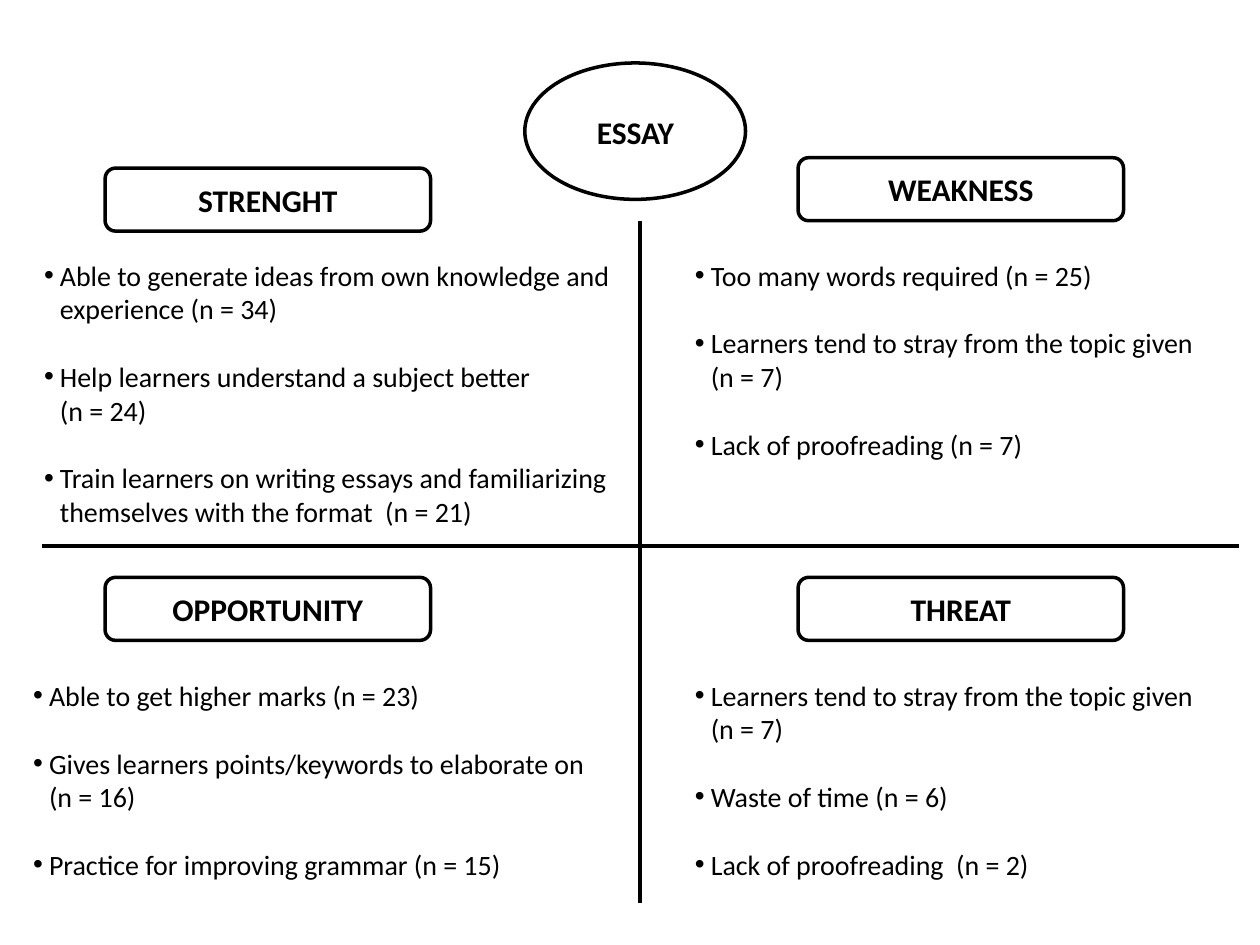
import pptx
import pptx.dml.color
import pptx.enum.shapes
import pptx.enum.text
import pptx.util
from lxml import etree

Cm, Pt = pptx.util.Cm, pptx.util.Pt
SHAPE = pptx.enum.shapes.MSO_SHAPE
ALIGN = pptx.enum.text.PP_ALIGN
ANCHOR = pptx.enum.text.MSO_ANCHOR

COLORS = {"ink": "000000", "paper": "FFFFFF"}
FONT = "Calibri"
TOPIC = "ESSAY"

# Positions in cm; \v breaks a line inside a point.
QUADRANTS = [
    {"heading": "STRENGHT", "heading_at": (2.12, 3.39), "list_at": (0.64, 5.08, 12.06, 6),
     "points": ["Able to generate ideas from own knowledge and experience (n = 34)",
                "Help learners understand a subject better\v(n = 24)",
                "Train learners on writing essays and familiarizing themselves "
                "with the format  (n = 21)"]},
    {"heading": "OPPORTUNITY", "heading_at": (2.12, 11.64), "list_at": (0.42, 13.55, 12.7, 5.5),
     "points": ["Able to get higher marks (n = 23)",
                "Gives learners points/keywords to elaborate on\v(n = 16)",
                "Practice for improving grammar (n = 15)"]},
    {"heading": "THREAT", "heading_at": (16.09, 11.64), "list_at": (13.76, 13.55, 11.01, 4.23),
     "points": ["Learners tend to stray from the topic given (n = 7)",
                "Waste of time (n = 6)",
                "Lack of proofreading  (n = 2)"]},
    {"heading": "WEAKNESS", "heading_at": (16.09, 3.18), "list_at": (13.76, 5.08, 11.64, 4.45),
     "points": ["Too many words required (n = 25)",
                "Learners tend to stray from the topic given\v(n = 7)",
                "Lack of proofreading (n = 7)"]},
]
HEADING_SIZE = (6.56, 1.27)
CENTER = (12.91, 11.01)
AXIS_ENDS = [((CENTER[0], 4.45), (CENTER[0], 18.2)),
             ((24.98, CENTER[1]), CENTER),
             (CENTER, (0.85, CENTER[1]))]


def color(name):
    return pptx.dml.color.RGBColor.from_string(COLORS[name])


def lengths(values):
    return [Cm(value) for value in values]


def format_runs(paragraph, size, bold=False):
    for run in paragraph.runs:
        run.font.name, run.font.size, run.font.bold = FONT, Pt(size), bold
        run.font.color.rgb = color("ink")


def add_outlined(shapes, preset, box):
    shape = shapes.add_shape(preset, *lengths(box))
    shape.shadow.inherit = False
    shape.fill.background()
    shape.line.color.rgb = color("ink")
    shape.line.width = Pt(2)
    return shape


def set_title(shape, text):
    frame = shape.text_frame
    frame.word_wrap = True
    frame.vertical_anchor = ANCHOR.MIDDLE
    frame.text = text
    frame.paragraphs[0].alignment = ALIGN.CENTER
    format_runs(frame.paragraphs[0], 18, bold=True)


def add_axis(shapes, start, end):
    axis = shapes.add_connector(pptx.enum.shapes.MSO_CONNECTOR.STRAIGHT, *lengths(start + end))
    axis.line.color.rgb = color("ink")
    axis.line.width = Pt(2.25)
    etree.SubElement(axis.element.spPr, pptx.oxml.ns.qn("a:effectLst"))


def add_points(shapes, box, points):
    frame = shapes.add_textbox(*lengths(box)).text_frame
    frame.word_wrap = True
    for index, point in enumerate(points):
        paragraph = frame.paragraphs[0] if index == 0 else frame.add_paragraph()
        paragraph.text = point
        paragraph.space_after = Pt(19.5)
        format_runs(paragraph, 16)
        properties = paragraph._p.get_or_add_pPr()
        properties.set("marL", str(Cm(0.32)))
        properties.set("indent", str(Cm(-0.32)))
        etree.SubElement(properties, pptx.oxml.ns.qn("a:buFont"), typeface="Arial")
        etree.SubElement(properties, pptx.oxml.ns.qn("a:buChar"), char="•")


def main():
    deck = pptx.Presentation()
    deck.slide_width, deck.slide_height = Cm(25.4), Cm(19.05)
    slide = deck.slides.add_slide(deck.slide_layouts[6])
    slide.background.fill.solid()
    slide.background.fill.fore_color.rgb = color("paper")
    shapes = slide.shapes

    for quadrant in QUADRANTS:
        heading = add_outlined(shapes, SHAPE.FLOWCHART_ALTERNATE_PROCESS,
                               quadrant["heading_at"] + HEADING_SIZE)
        set_title(heading, quadrant["heading"])
    for start, end in AXIS_ENDS:
        add_axis(shapes, start, end)

    topic = shapes.add_group_shape().shapes
    add_outlined(topic, SHAPE.OVAL, (10.58, 1.27, 4.45, 2.75))
    set_title(topic.add_textbox(*lengths((10.8, 2.16, 4.02, 1.02))), TOPIC)

    for quadrant in QUADRANTS:
        add_points(shapes, quadrant["list_at"], quadrant["points"])
    deck.save("out.pptx")


if __name__ == "__main__":
    main()
